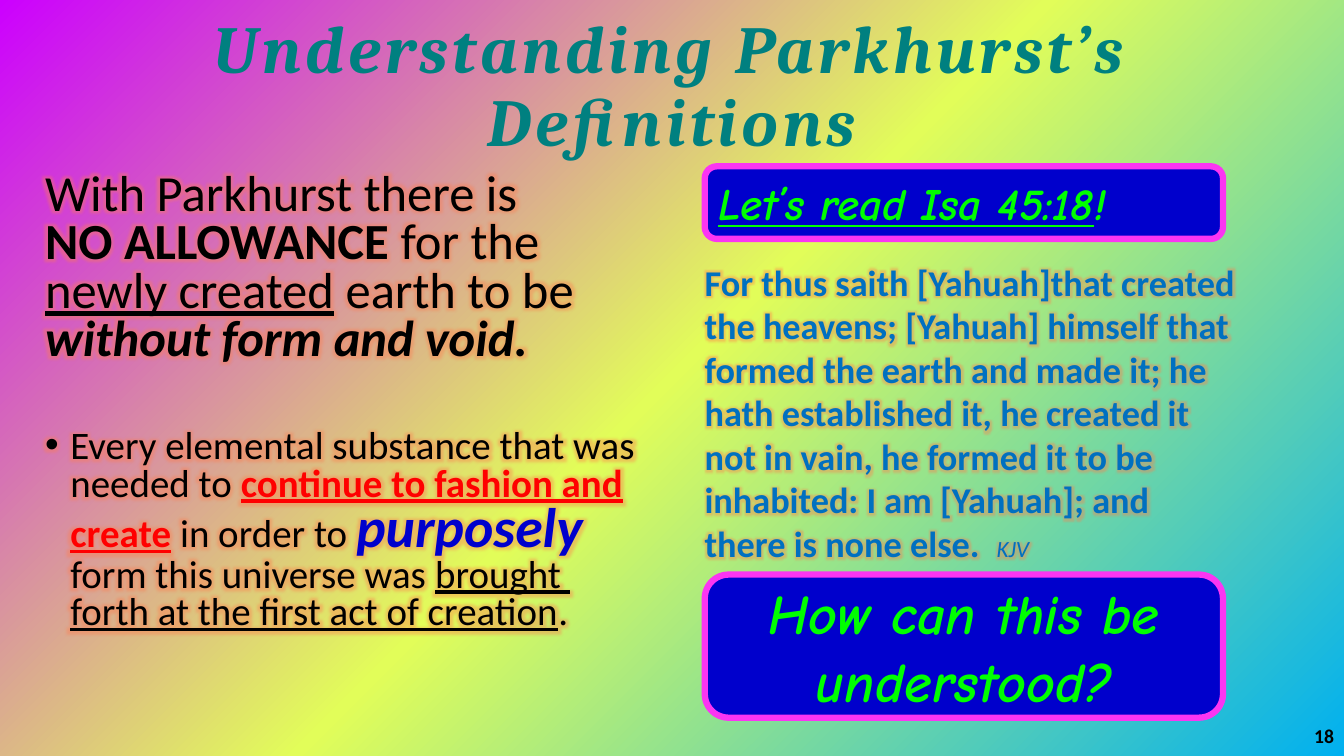
import copy
from dataclasses import dataclass

import lxml.etree
import pptx
import pptx.dml.color
import pptx.enum.shapes
import pptx.enum.text
import pptx.oxml
import pptx.oxml.ns
import pptx.util

Inches = pptx.util.Inches
Pt = pptx.util.Pt
ALIGN = pptx.enum.text.PP_ALIGN
ANCHOR = pptx.enum.text.MSO_ANCHOR


@dataclass(frozen=True)
class Theme:
    title_font: str = "Cambria"
    body_font: str = "Calibri"
    panel_font: str = "Comic Neue"
    title: str = "008080"
    ink: str = "000000"
    alert: str = "FF0000"
    navy: str = "0000CC"
    verse: str = "0070C0"
    lime: str = "00FF00"
    border: str = "FB35F2"
    glow: str = "FF7C4D"
    background: tuple = ((0, "00B0F0"), (50, "E2FD59"), (100, "CC00FF"))
    title_size: float = 48
    lead_size: float = 36.1
    gap_size: float = 29.6
    point_size: float = 27.8
    accent_size: float = 39.8
    verse_size: float = 25.9
    source_size: float = 16.6
    number_size: float = 14
    prompt_size: float = 32
    question_size: float = 40


THEME = Theme()
LEAD = {"size": THEME.lead_size}
POINT = {"size": THEME.point_size}
ALERT = POINT | {"color": THEME.alert}
PANEL = {"font": THEME.panel_font, "color": THEME.lime, "bold": True, "italic": True, "glow": False}
PROMPT = PANEL | {"size": THEME.prompt_size}

TITLE = [("Understanding Parkhurst’s Definitions", {
    "size": THEME.title_size, "font": THEME.title_font, "color": THEME.title,
    "bold": True, "italic": True, "glow": False, "spacing": 3})]
ALLOWANCE = [
    ("With Parkhurst there is \n", LEAD),
    ("NO ALLOWANCE ", LEAD | {"bold": True}),
    ("for the \n", LEAD),
    ("newly created", LEAD | {"underline": True}),
    (" earth to be \n", LEAD),
    ("without form and void.", LEAD | {"bold": True, "italic": True}),
    ("  \n", {"size": THEME.gap_size}),
]
SUBSTANCE = [
    ("Every elemental substance that was needed to ", POINT),
    ("continue to fashion and create", ALERT | {"bold": True, "underline": True}),
    (" in order to ", POINT),
    ("purposely", {"size": THEME.accent_size, "color": THEME.navy, "bold": True, "italic": True}),
    (" \nform this universe was ", POINT),
    ("brought \nforth at the first act of creation", POINT | {"underline": True}),
    (".", POINT),
]
VERSE = [
    ("For thus saith [Yahuah]that created the heavens; [Yahuah] himself that formed the earth "
     "and made it; he hath established it, he created it\nnot in vain, he formed it to be "
     "inhabited: I am [Yahuah]; and \nthere is none else.  ",
     {"size": THEME.verse_size, "color": THEME.verse, "bold": True}),
    ("KJV", {"size": THEME.source_size, "color": THEME.verse, "italic": True}),
]
NUMBER = [("18", {"size": THEME.number_size, "bold": True, "glow": False})]
PANEL_LEFT, PANEL_WIDTH = 6.99, 5.14
PANELS = [
    (1.65, 0.72, ALIGN.LEFT,
     [("Let’s read Isa 45:18", PROMPT | {"underline": True}), ("!", PROMPT)]),
    (5.7, 1.42, ALIGN.CENTER,
     [("How can this be understood?", PANEL | {"size": THEME.question_size})]),
]


def rgb(value):
    return pptx.dml.color.RGBColor.from_string(value)


def parse_xml(tag, content, attributes=""):
    namespace = pptx.oxml.ns.nsdecls("a")
    return pptx.oxml.parse_xml(f"<a:{tag} {namespace} {attributes}>{content}</a:{tag}>")


def format_run(run, size, font=THEME.body_font, color=THEME.ink, bold=False, italic=False,
               underline=False, glow=True, spacing=0):
    run.font.size = Pt(size)
    run.font.bold, run.font.italic, run.font.underline = bold, italic, underline
    run.font.color.rgb = rgb(color)
    properties = run._r.get_or_add_rPr()
    if glow:
        halo = (f'<a:glow rad="{Pt(8)}"><a:srgbClr val="{THEME.glow}">'
                '<a:alpha val="40000"/></a:srgbClr></a:glow>')
        properties.append(parse_xml("effectLst", halo))
    run.font.name = font
    if spacing:
        properties.set("spc", str(spacing * 100))


def write_paragraph(paragraph, pieces, align=ALIGN.LEFT, line_spacing=1.0, space_before=0):
    paragraph.alignment = align
    paragraph.line_spacing = line_spacing
    paragraph.space_before = Pt(space_before)
    for text, style in pieces:
        for index, line in enumerate(text.split("\n")):
            if index:
                paragraph.add_line_break()
                paragraph._p[-1].append(copy.deepcopy(run._r.rPr))
            if line:
                run = paragraph.add_run()
                run.text = line
                format_run(run, **style)
    if text.endswith("\n"):
        ending = lxml.etree.SubElement(paragraph._p, pptx.oxml.ns.qn("a:endParaRPr"))
        ending.set("sz", str(round(style["size"] * 100)))


def add_bullet(paragraph, indent):
    properties = paragraph._p.get_or_add_pPr()
    properties.set("marL", str(Inches(indent)))
    properties.set("indent", str(-Inches(indent)))
    properties.append(parse_xml("buFont", "", 'typeface="Arial"'))
    properties.append(parse_xml("buChar", "", 'char="•"'))


def add_text(slide, left, top, width, height, anchor=ANCHOR.TOP):
    box = slide.shapes.add_textbox(Inches(left), Inches(top), Inches(width), Inches(height))
    box.text_frame.word_wrap = True
    box.text_frame.vertical_anchor = anchor
    return box.text_frame


def add_panel(slide, top, height, align, pieces):
    panel = slide.shapes.add_shape(
        pptx.enum.shapes.MSO_SHAPE.ROUNDED_RECTANGLE,
        Inches(PANEL_LEFT), Inches(top), Inches(PANEL_WIDTH), Inches(height))
    panel.shadow.inherit = False
    panel.fill.solid()
    panel.fill.fore_color.rgb = rgb(THEME.navy)
    panel.line.color.rgb = rgb(THEME.border)
    panel.line.width = Pt(4.5)
    panel.text_frame.word_wrap = True
    panel.text_frame.vertical_anchor = ANCHOR.MIDDLE
    write_paragraph(panel.text_frame.paragraphs[0], pieces, align)


def paint_background(slide):
    slide.background.fill.solid()
    properties = slide.background._cSld.bg.bgPr
    stops = "".join(f'<a:gs pos="{position * 1000}"><a:srgbClr val="{color}"/></a:gs>'
                    for position, color in THEME.background)
    gradient = parse_xml("gradFill", f'<a:gsLst>{stops}</a:gsLst><a:path path="circle">'
                         '<a:fillToRect l="100000" t="100000"/></a:path>', 'rotWithShape="1"')
    properties.replace(properties[0], gradient)


def main():
    """Build the slide on Parkhurst's definitions and save it."""
    presentation = pptx.Presentation()
    presentation.slide_width, presentation.slide_height = Inches(13.33), Inches(7.5)
    slide = presentation.slides.add_slide(presentation.slide_layouts[5])
    paint_background(slide)

    title = slide.shapes.title
    title.left, title.top = Inches(0.91), Inches(0.15)
    title.width, title.height = Inches(11.5), Inches(1.45)
    title.text_frame.vertical_anchor = ANCHOR.MIDDLE
    write_paragraph(title.text_frame.paragraphs[0], TITLE, ALIGN.CENTER, 0.9)

    argument = add_text(slide, 0.35, 1.66, 6.23, 5.56)
    write_paragraph(argument.paragraphs[0], ALLOWANCE, line_spacing=0.8, space_before=10)
    point = argument.add_paragraph()
    write_paragraph(point, SUBSTANCE, line_spacing=0.8, space_before=10)
    add_bullet(point, 0.25)

    verse = add_text(slide, 6.89, 2.53, 5.67, 3.17)
    write_paragraph(verse.paragraphs[0], VERSE, space_before=10)
    number = add_text(slide, 10.33, 7.1, 3, 0.4, ANCHOR.MIDDLE)
    write_paragraph(number.paragraphs[0], NUMBER, ALIGN.RIGHT)
    for panel in PANELS:
        add_panel(slide, *panel)
    presentation.save("out.pptx")


if __name__ == "__main__":
    main()
